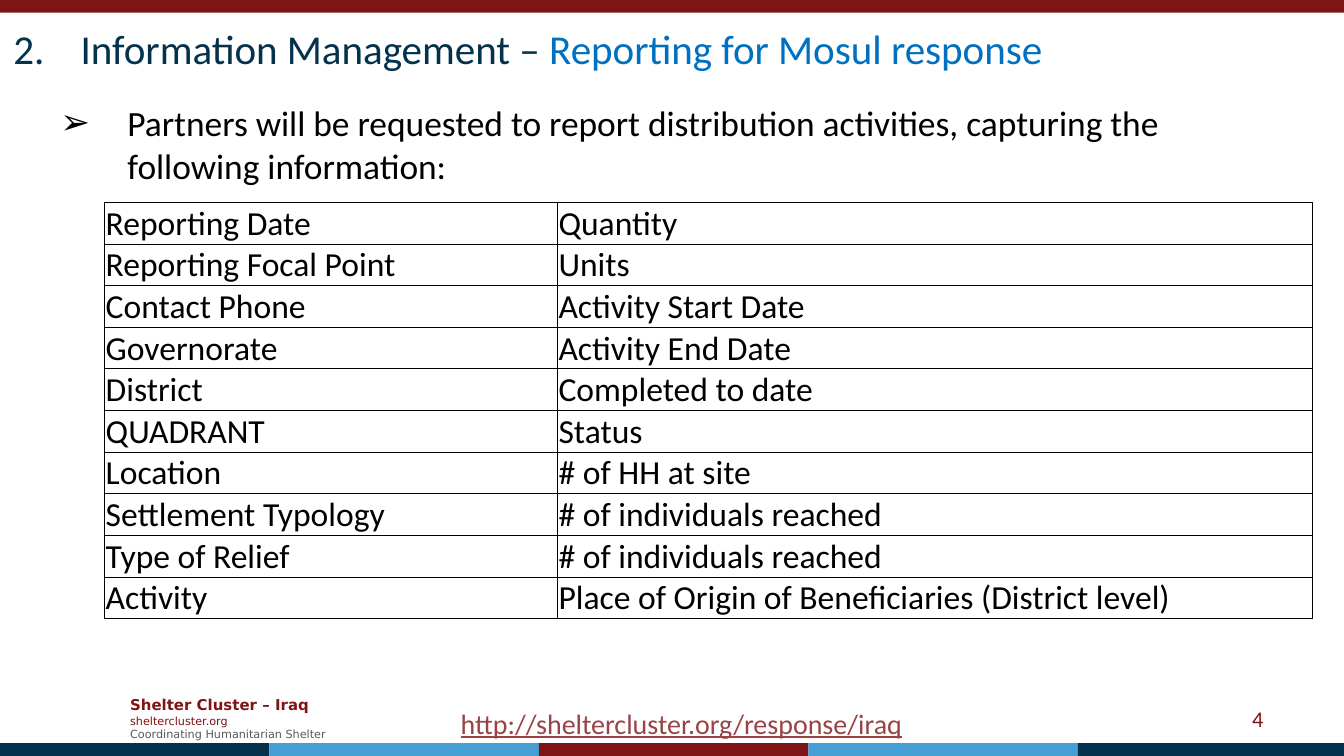
from lxml import etree
from pptx import Presentation
from pptx.dml.color import RGBColor
from pptx.enum.shapes import MSO_SHAPE
from pptx.enum.text import MSO_ANCHOR, MSO_AUTO_SIZE, PP_ALIGN
from pptx.oxml.ns import qn
from pptx.util import Inches, Pt

RECT = MSO_SHAPE.RECTANGLE
MIDDLE, BOTTOM, TOP = MSO_ANCHOR.MIDDLE, MSO_ANCHOR.BOTTOM, MSO_ANCHOR.TOP
LEFT, RIGHT = PP_ALIGN.LEFT, PP_ALIGN.RIGHT
NO_FIT = MSO_AUTO_SIZE.NONE
TITLE_ONLY = 5
COLORS = {"red": "7F1416", "navy": "04314C", "sky": "459FD5", "blue": "0070C0",
          "link": "994345", "gray": "595959", "black": "000000"}
WIDTH = Inches(10)
HEIGHT = WIDTH * 9 // 16
COLS = 100
UNIT = WIDTH / COLS
FIELDS = [
    ("Reporting Date", "Quantity"),
    ("Reporting Focal Point", "Units"),
    ("Contact Phone", "Activity Start Date"),
    ("Governorate", "Activity End Date"),
    ("District", "Completed to date"),
    ("QUADRANT", "Status"),
    ("Location", "# of HH at site"),
    ("Settlement Typology", "# of individuals reached"),
    ("Type of Relief", "# of individuals reached"),
    ("Activity", "Place of Origin of Beneficiaries (District level)"),
]


def grid(*lengths):
    """Convert grid units to slide lengths."""
    return [round(n * UNIT) for n in lengths]


def style(r, size, color, font="Calibri", bold=False):
    """Format one run."""
    r.font.size, r.font.name, r.font.bold = Pt(size), font, bold
    r.font.color.rgb = RGBColor.from_string(COLORS[color])


def add_run(p, text, *look):
    """Append a formatted run to a paragraph."""
    r = p.add_run()
    r.text = text
    style(r, *look)
    return r


def add_bullet(p, tag, font, **attrs):
    """Give a paragraph a hanging bullet or number."""
    pPr = p._p.get_or_add_pPr()
    indent = grid(5)[0]
    pPr.set("marL", str(indent))
    pPr.set("indent", str(-indent))
    etree.SubElement(pPr, qn("a:buFont"), typeface=font)
    etree.SubElement(pPr, qn(tag), **attrs)


def add_text(s, box, anchor=TOP):
    """Add a wrapping text box and return its frame."""
    tf = s.shapes.add_textbox(*grid(*box)).text_frame
    tf.word_wrap, tf.vertical_anchor = True, anchor
    return tf


def add_bar(s, box, color):
    """Add a plain coloured bar."""
    sp = s.shapes.add_shape(RECT, *grid(*box))
    sp.shadow.inherit = False
    sp.fill.solid()
    sp.fill.fore_color.rgb = RGBColor.from_string(COLORS[color])
    sp.line.fill.background()


def add_bands(s, box):
    """Split a strip into five coloured bands."""
    x, y, w, h = box
    step = 20.05
    for i, color in enumerate(("navy", "sky", "red", "sky", "navy")):
        add_bar(s, (x + i * step, y, min(step, w - i * step), h), color)


def add_title(s, box):
    """Place the numbered two-colour title."""
    sp = s.shapes.title
    sp.left, sp.top, sp.width, sp.height = grid(*box)
    tf = sp.text_frame
    tf.auto_size, tf.vertical_anchor = NO_FIT, MIDDLE
    p = tf.paragraphs[0]
    add_bullet(p, "a:buAutoNum", "Calibri", type="arabicPeriod", startAt="2")
    p.alignment = LEFT
    add_run(p, "Information Management – ", 22, "navy")
    add_run(p, "Reporting for Mosul response", 22, "blue")


def add_intro(s, box):
    """Place the bulleted introduction."""
    tf = add_text(s, box)
    tf.margin_right = Inches(0.15)
    p = tf.paragraphs[0]
    add_bullet(p, "a:buChar", "DejaVu Sans", char="➢")
    add_run(p, "Partners will be requested to report distribution activities, "
               "capturing the following information:", 19, "black")


def add_borders(cell):
    """Draw thin black lines on all sides of a cell."""
    tcPr = cell._tc.get_or_add_tcPr()
    for i, side in enumerate(("lnL", "lnR", "lnT", "lnB")):
        ln = etree.Element(qn(f"a:{side}"), w=str(Pt(0.5)))
        fill = etree.SubElement(ln, qn("a:solidFill"))
        etree.SubElement(fill, qn("a:srgbClr"), val=COLORS["black"])
        tcPr.insert(i, ln)


def add_fields(s, box):
    """Place the table of reporting fields."""
    table = s.shapes.add_table(len(FIELDS), 2, *grid(*box)).table
    table.first_row = table.horz_banding = False
    for column, share in zip(table.columns, (0.375, 0.625)):
        column.width = grid(box[2] * share)[0]
    for i, row in enumerate(FIELDS):
        for j, text in enumerate(row):
            cell = table.cell(i, j)
            cell.margin_left = cell.margin_right = cell.margin_top = Pt(0.5)
            cell.margin_bottom = 0
            cell.vertical_anchor = BOTTOM
            cell.fill.background()
            add_borders(cell)
            add_run(cell.text_frame.paragraphs[0], text, 18, "black")


def add_footer(s, box):
    """Place the cluster name, web link and page number."""
    x, y, w, h = box
    tf = add_text(s, (x, y, w * 0.2, h), MIDDLE)
    lines = (("Shelter Cluster – Iraq", 8, "red", True),
             ("sheltercluster.org", 6, "red", False),
             ("Coordinating Humanitarian Shelter", 6, "gray", False))
    for i, (text, size, color, bold) in enumerate(lines):
        p = tf.add_paragraph() if i else tf.paragraphs[0]
        add_run(p, text, size, color, "DejaVu Sans", bold)
    tf = add_text(s, (x + 63, y + 0.7, 23.3, 3), MIDDLE)
    tf.paragraphs[0].alignment = RIGHT
    add_run(tf.paragraphs[0], "4", 12, "red")
    tf = add_text(s, (x + 24.6, y + 0.8, 66.3, 3.5))
    r = add_run(tf.paragraphs[0], "http://sheltercluster.org/response/iraq", 15, "link")
    r.font.underline = True


def main():
    """Build and save the slide."""
    prs = Presentation()
    prs.slide_width, prs.slide_height = WIDTH, HEIGHT
    s = prs.slides.add_slide(prs.slide_layouts[TITLE_ONLY])
    add_bar(s, (0, 0, COLS, 0.95), "red")
    add_bands(s, (0, 55.3, COLS, 0.95))
    add_footer(s, (8.7, 51.25, 86.5, 4.4))
    add_intro(s, (3.5, 7.05, 93.8, 6.7))
    add_fields(s, (7.8, 15.05, 89.85, 31))
    add_title(s, (0, 1.6, COLS, 4))
    prs.save("out.pptx")


if __name__ == "__main__":
    main()
